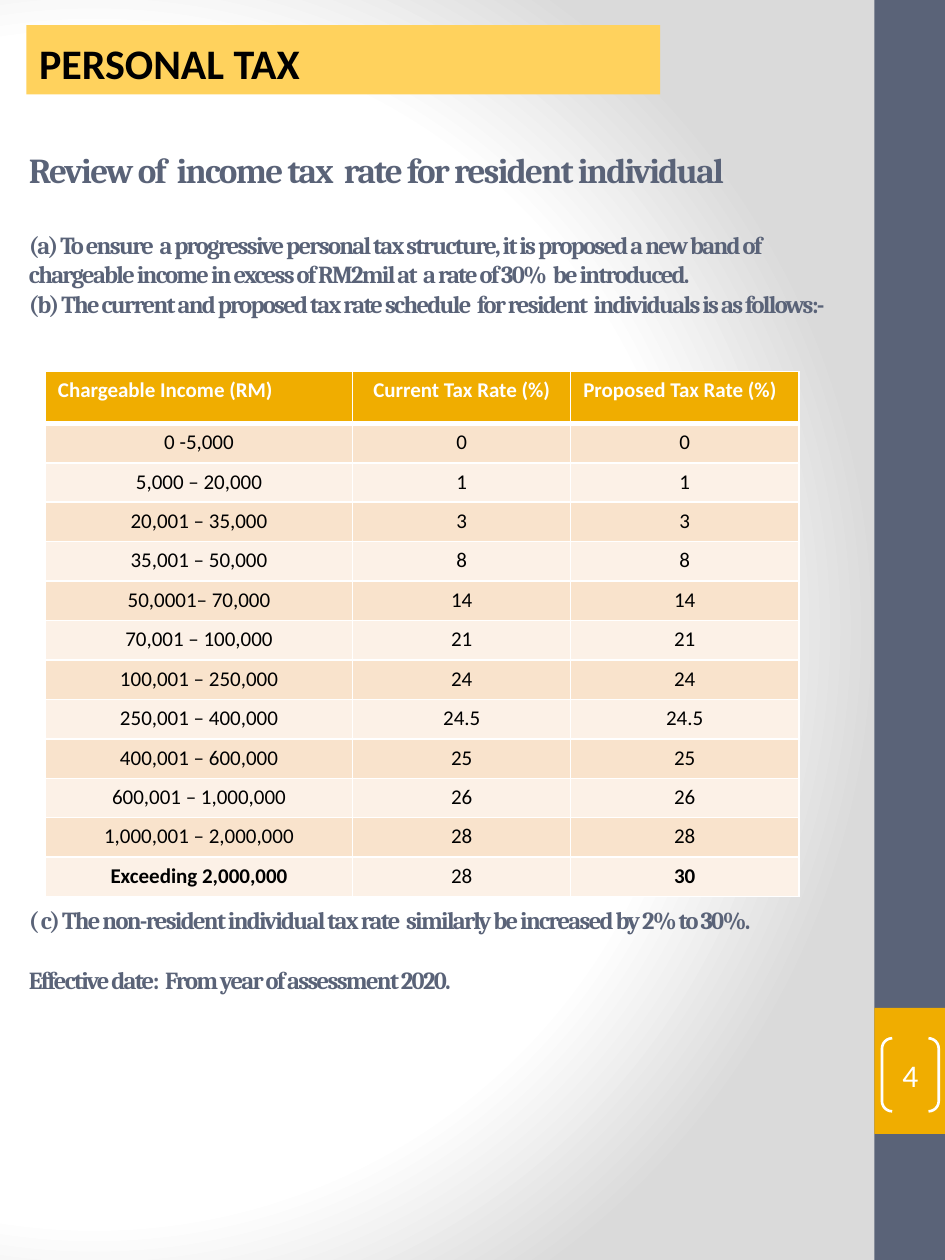
from lxml import etree
from pptx import Presentation
from pptx.dml.color import RGBColor
from pptx.enum.shapes import MSO_SHAPE
from pptx.enum.text import MSO_ANCHOR, MSO_AUTO_SIZE, PP_ALIGN
from pptx.oxml import parse_xml
from pptx.oxml.ns import nsdecls, qn
from pptx.util import Inches, Pt

RECT, PAIR = MSO_SHAPE.RECTANGLE, MSO_SHAPE.DOUBLE_BRACKET
TOP, MID, LOW = MSO_ANCHOR.TOP, MSO_ANCHOR.MIDDLE, MSO_ANCHOR.BOTTOM
LEFT, MIDDLE = PP_ALIGN.LEFT, PP_ALIGN.CENTER
FIXED = MSO_AUTO_SIZE.NONE
SLATE, GOLD, WHITE, BLACK = "5A6378", "F0AD00", "FFFFFF", "000000"
BANDS = ["F9E3CC", "FCF1E7"]
STOPS = [(0, WHITE), (75, WHITE), (100, "DADADA")]

# text, size, line pitch, space before
PROSE = [
    ("Review of  income tax  rate for resident individual", 20, 24, 0),
    ("(a) To ensure  a progressive personal tax structure, it is proposed a new band of "
     "chargeable income in excess of RM2mil at  a rate of 30%  be introduced.", 14, 17, 22),
    ("(b) The current and proposed tax rate schedule  for resident  individuals "
     "is as follows:-", 14, 17, 0),
    ("( c) The non-resident individual tax rate  similarly be increased by 2% to 30%.",
     14, 17, 335),
    ("Effective date:  From year of assessment 2020.", 14, 17, 17),
]
HEADS = ["Chargeable Income (RM)", "Current Tax Rate (%)", "Proposed Tax Rate (%)"]
RATES = [
    ("0 -5,000", "0", "0"),
    ("5,000 – 20,000", "1", "1"),
    ("20,001 – 35,000", "3", "3"),
    ("35,001 – 50,000", "8", "8"),
    ("50,0001– 70,000", "14", "14"),
    ("70,001 – 100,000", "21", "21"),
    ("100,001 – 250,000", "24", "24"),
    ("250,001 – 400,000", "24.5", "24.5"),
    ("400,001 – 600,000", "25", "25"),
    ("600,001 – 1,000,000", "26", "26"),
    ("1,000,001 – 2,000,000", "28", "28"),
    ("Exceeding 2,000,000", "28", "30"),
]


def color(code):
    """Turn a hex string into a colour."""
    return RGBColor.from_string(code)


def paint(item, code):
    """Give a shape or cell a solid fill."""
    item.fill.solid()
    item.fill.fore_color.rgb = color(code)


def style(para, size, code, bold=False, face="Calibri", align=LEFT):
    """Format a paragraph and its runs."""
    para.alignment = align
    for run in para.runs:
        font = run.font
        font.size, font.bold, font.name = Pt(size), bold, face
        font.color.rgb = color(code)


def place(shape, left, top, width, height):
    """Set the place and size of a shape in inches."""
    shape.left, shape.top = Inches(left), Inches(top)
    shape.width, shape.height = Inches(width), Inches(height)


def shade(slide):
    """Fill the background with a radial gradient."""
    stops = "".join(f'<a:gs pos="{pos * 1000}"><a:srgbClr val="{code}"/></a:gs>'
                    for pos, code in STOPS)
    slide.background.fill.solid()
    props = slide.element.cSld.find(qn("p:bg")).find(qn("p:bgPr"))
    props.replace(props.find(qn("a:solidFill")), parse_xml(
        f'<a:gradFill rotWithShape="1" {nsdecls("a")}><a:gsLst>{stops}</a:gsLst>'
        '<a:path path="circle"><a:fillToRect l="20000" t="50000" r="100000" b="50000"/>'
        '</a:path></a:gradFill>'))


def add_bar(slide, top, height, code):
    """Add a block of the side bar."""
    bar = slide.shapes.add_shape(RECT, Inches(6.94), Inches(top), Inches(0.56), Inches(height))
    bar.shadow.inherit = False
    paint(bar, code)
    bar.line.fill.background()


def add_page(slide, text):
    """Add the page number between brackets."""
    pair = slide.shapes.add_shape(PAIR, Inches(7), Inches(8.24), Inches(0.45), Inches(0.58))
    pair.shadow.inherit = False
    pair.adjustments[0] = 0.18
    pair.fill.background()
    pair.line.color.rgb, pair.line.width = color(WHITE), Pt(1.5)
    frame = pair.text_frame
    frame.margin_left = frame.margin_right = frame.margin_top = frame.margin_bottom = 0
    frame.vertical_anchor = MID
    frame.text = text
    style(frame.paragraphs[0], 18, WHITE, align=MIDDLE)


def fill_label(body):
    """Turn the body placeholder into the topic label."""
    place(body, 0.21, 0.2, 5.03, 0.55)
    paint(body, "FFD25D")
    frame = body.text_frame
    frame.auto_size, frame.vertical_anchor = FIXED, LOW
    frame.text = "PERSONAL TAX"
    para = frame.paragraphs[0]
    style(para, 24, BLACK, True)
    props = para._p.get_or_add_pPr()
    props.set("marL", "0")
    props.set("indent", "0")
    etree.SubElement(props, qn("a:buNone"))


def fill_prose(title):
    """Write the heading and the clauses around the table."""
    place(title, 0.13, 1.13, 6.61, 9.14)
    frame = title.text_frame
    frame.auto_size, frame.vertical_anchor, frame.word_wrap = FIXED, TOP, True
    frame.text = "\n".join(row[0] for row in PROSE)
    for para, (_, size, pitch, gap) in zip(frame.paragraphs, PROSE):
        style(para, size, SLATE, True, "Cambria")
        para.line_spacing, para.space_before = Pt(pitch), Pt(gap)
        para.space_after = Pt(0)
        for run in para.runs:
            run._r.get_or_add_rPr().set("spc", "-100")


def edge(cell, base):
    """Draw white borders, the bottom one of a given width."""
    props = cell._tc.get_or_add_tcPr()
    for side, width in zip("LRTB", (1, 1, 1, base)):
        line = etree.SubElement(props, qn(f"a:ln{side}"), w=str(Pt(width)))
        solid = etree.SubElement(line, qn("a:solidFill"))
        etree.SubElement(solid, qn("a:srgbClr"), val=WHITE)


def add_rates(slide):
    """Add the table of tax rates."""
    rows = [HEADS] + RATES
    table = slide.shapes.add_table(len(rows), len(HEADS), Inches(0.36), Inches(2.95),
                                   Inches(5.98), Inches(4.17)).table
    for col, width in zip(table.columns, (2.44, 1.73, 1.81)):
        col.width = Inches(width)
    for i, row in enumerate(rows):
        head, last = i == 0, i == len(RATES)
        table.rows[i].height = Inches(0.41 if head else (4.17 - 0.41) / len(RATES))
        for j, text in enumerate(row):
            cell = table.cell(i, j)
            edge(cell, 3 if head else 1)
            paint(cell, GOLD if head else BANDS[(i - 1) % 2])
            cell.text = text
            style(cell.text_frame.paragraphs[0], 12, WHITE if head else BLACK,
                  head or (last and j != 1), align=LEFT if head and j != 1 else MIDDLE)


def main():
    """Build the slide and save it."""
    deck = Presentation()
    deck.slide_width, deck.slide_height = Inches(7.5), Inches(10)
    slide = deck.slides.add_slide(deck.slide_layouts[1])
    shade(slide)
    add_bar(slide, 0, 10, SLATE)
    add_bar(slide, 8, 1, GOLD)
    fill_prose(slide.shapes.title)
    fill_label(slide.placeholders[1])
    add_rates(slide)
    add_page(slide, "4")
    deck.save("out.pptx")


if __name__ == "__main__":
    main()
